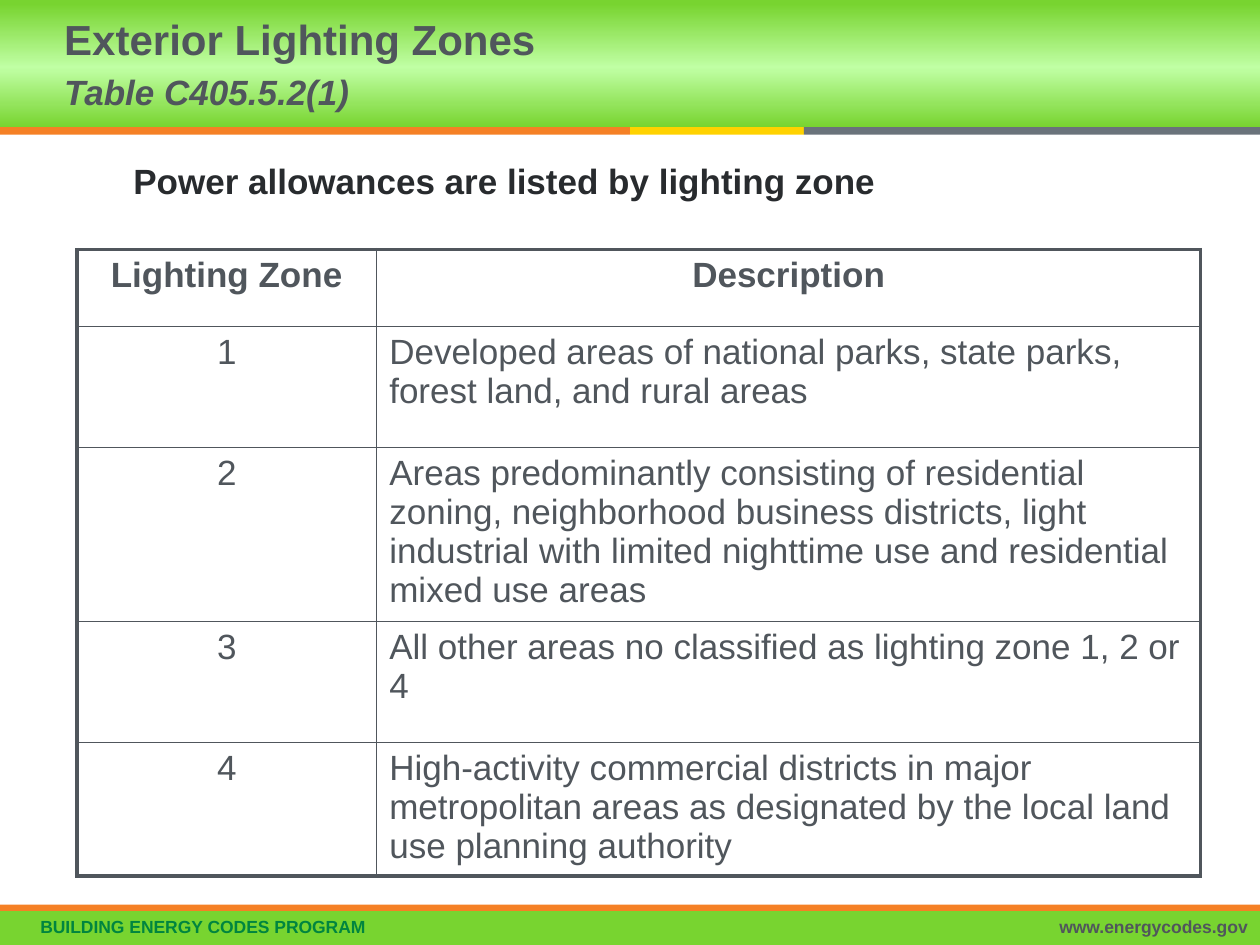
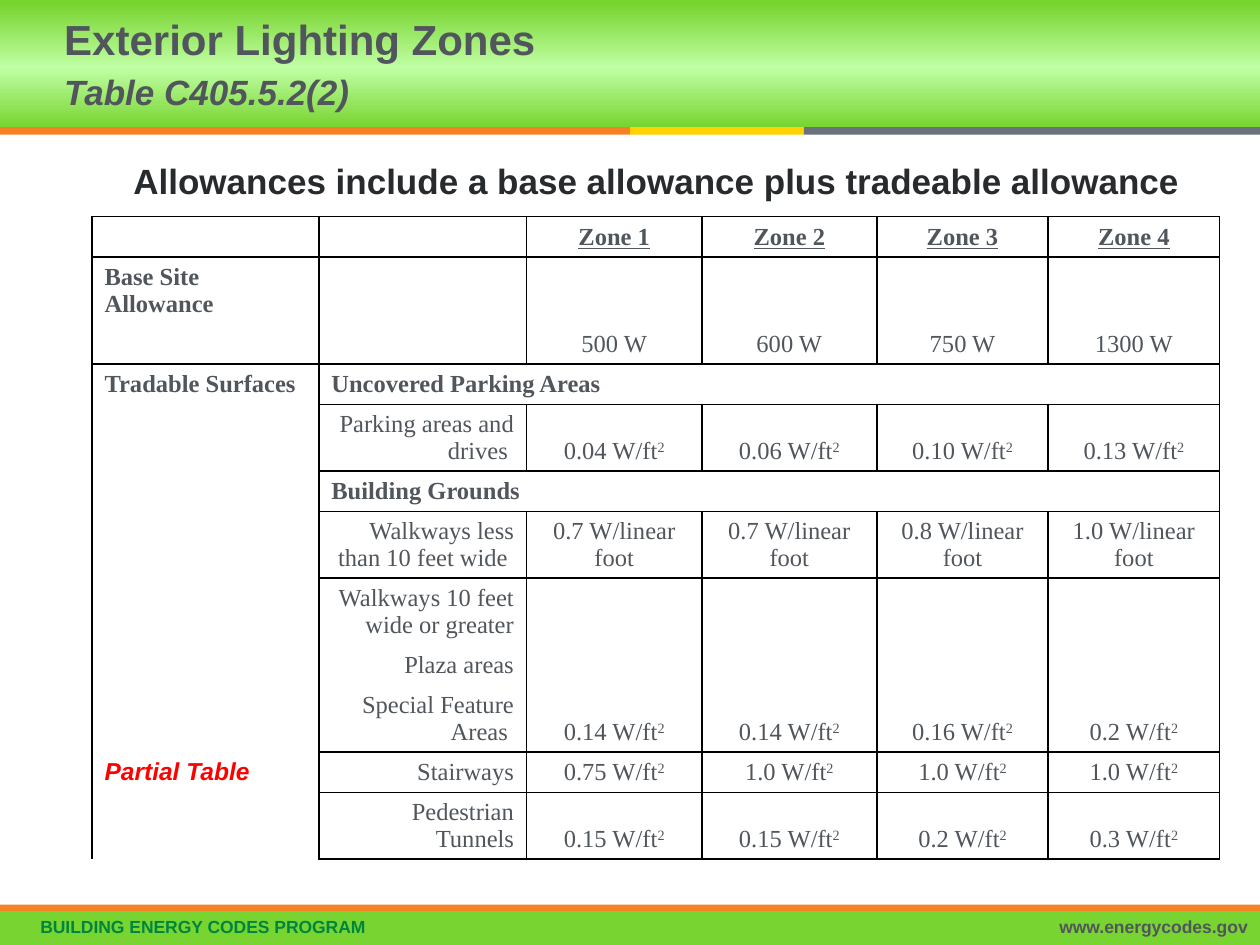
"""Build two slides on exterior lighting zones and their power allowances."""
from copy import deepcopy

from lxml.etree import SubElement
from pptx import Presentation
from pptx.dml.color import RGBColor
from pptx.enum.shapes import MSO_SHAPE as Shape
from pptx.enum.text import MSO_ANCHOR as Anchor, PP_ALIGN as Align
from pptx.oxml.ns import qn
from pptx.util import Inches, Pt

GREEN = RGBColor(0x78, 0xD4, 0x30)
LIGHT_GREEN = RGBColor(0xC0, 0xFF, 0xA4)
DARK_GREEN = RGBColor(0x00, 0x85, 0x3F)
ORANGE = RGBColor(0xF5, 0x80, 0x25)
YELLOW = RGBColor(0xFF, 0xD2, 0x00)
STEEL = RGBColor(0x6A, 0x73, 0x7B)
GRAY = RGBColor(0x50, 0x56, 0x5C)
CHARCOAL = RGBColor(0x28, 0x2B, 0x2E)
RED = RGBColor(0xFF, 0x00, 0x00)
BLACK = RGBColor(0x00, 0x00, 0x00)


def format_run(run, size, color=GRAY, bold=False, italic=False, name="Arial"):
    font = run.font
    font.name, font.size, font.bold, font.italic = name, Pt(size), bold, italic
    font.color.rgb = color


def set_borders(cell, color, left, right, top, bottom):
    properties = cell._tc.get_or_add_tcPr()
    for side, width in zip("LRTB", (left, right, top, bottom)):
        line = SubElement(properties, qn(f"a:ln{side}"), w=str(Pt(width)))
        if width:
            fill = SubElement(line, qn("a:solidFill"))
            SubElement(fill, qn("a:srgbClr"), val=str(color))
        else:
            SubElement(line, qn("a:noFill"))
    cell.fill.background()


presentation = Presentation()
presentation.slide_width, presentation.slide_height = Inches(10), Inches(7.5)
layout = presentation.slide_layouts[5]

titles = [
    ("Table C405.5.2(1)", "Power allowances are listed by lighting zone"),
    ("Table C405.5.2(2)", "Allowances include a base allowance plus tradeable allowance"),
]
slides = []
for table_number, statement in titles:
    slide = presentation.slides.add_slide(layout)
    slides.append(slide)
    title = slide.shapes.title
    title.left, title.top = Inches(0.41), Inches(0)
    title.width, title.height = Inches(5.97), Inches(1.01)
    title.text_frame.text = f"Exterior Lighting Zones\v{table_number}"
    title.text_frame.vertical_anchor = Anchor.MIDDLE
    paragraph = title.text_frame.paragraphs[0]
    paragraph.alignment = Align.LEFT
    paragraph.line_spacing = Pt(28)
    heading, subheading = paragraph.runs
    format_run(heading, 24, bold=True)
    format_run(subheading, 20, bold=True, italic=True)

    box = slide.shapes.add_textbox(Inches(0.96), Inches(1.22), Inches(8.7), Inches(0.42))
    box.text_frame.word_wrap = True
    box.text_frame.text = statement
    format_run(box.text_frame.paragraphs[0].runs[0], 20, CHARCOAL, bold=True)

zone_slide, allowance_slide = slides

shared_shapes = []
bands = [
    (0, 0, 10, 1.01, GREEN),
    (0, 7.23, 10, 0.27, GREEN),
    (0, 1.01, 5, 0.06, ORANGE),
    (5, 1.01, 1.38, 0.06, YELLOW),
    (6.38, 1.01, 3.62, 0.06, STEEL),
    (0, 7.18, 10, 0.05, ORANGE),
]
for left, top, width, height, color in bands:
    band = zone_slide.shapes.add_shape(
        Shape.RECTANGLE, Inches(left), Inches(top), Inches(width), Inches(height))
    band.shadow.inherit = False
    band.line.fill.background()
    band.fill.solid()
    band.fill.fore_color.rgb = color
    shared_shapes.append(band)

header_fill = shared_shapes[0].fill
header_fill.gradient()
header_fill.gradient_angle = 90
stop_list = shared_shapes[0].element.find(".//" + qn("a:gsLst"))
stop_list.append(deepcopy(stop_list[0]))
for stop, position, color in zip(
        header_fill.gradient_stops, (0, 0.47, 0.97), (GREEN, LIGHT_GREEN, GREEN)):
    stop.position = position
    stop.color.rgb = color

footers = [
    (0.07, 5.9, "BUILDING ENERGY CODES PROGRAM", DARK_GREEN, Align.LEFT),
    (5.99, 4.01, "www.energycodes.gov", GRAY, Align.RIGHT),
]
for left, width, text, color, alignment in footers:
    footer = zone_slide.shapes.add_textbox(
        Inches(left), Inches(7.22), Inches(width), Inches(0.26))
    frame = footer.text_frame
    frame.word_wrap = True
    frame.margin_left = Inches(0.25)
    frame.vertical_anchor = Anchor.MIDDLE
    frame.text = text
    frame.paragraphs[0].alignment = alignment
    format_run(frame.paragraphs[0].runs[0], 10, color, bold=True)
    shared_shapes.append(footer)

for number, shape in enumerate(shared_shapes):
    shape.element.find(".//" + qn("p:cNvPr")).set("id", str(100 + number))
    layout.shapes.element.insert(2 + number, shape.element)

zone_rows = [
    ("Lighting Zone", "Description"),
    ("1", "Developed areas of national parks, state parks, forest land, and rural areas"),
    ("2", "Areas predominantly consisting of residential zoning, neighborhood business "
          "districts, light industrial with limited nighttime use and residential "
          "mixed use areas"),
    ("3", "All other areas no classified as lighting zone 1, 2 or 4"),
    ("4", "High-activity commercial districts in major metropolitan areas as designated "
          "by the local land use planning authority"),
]
zone_heights = [0.61, 0.96, 1.38, 0.96, 1.06]
zone_widths = [2.38, 6.54]

allowance_rows = [
    ("", "", "Zone 1", "Zone 2", "Zone 3", "Zone 4"),
    ("Base Site Allowance", "", "500 W", "600 W", "750 W", "1300 W"),
    ("",) * 6,
    ("Tradable Surfaces", "Uncovered Parking Areas", "", "", "", ""),
    ("", "Parking areas and drives ", "0.04 W/ft^2", "0.06 W/ft^2", "0.10 W/ft^2", "0.13 W/ft^2"),
    ("", "Building Grounds", "", "", "", ""),
    ("", "Walkways less than 10 feet wide ", "0.7 W/linear foot", "0.7 W/linear foot",
     "0.8 W/linear foot", "1.0 W/linear foot"),
    ("", "Walkways 10 feet wide or greater", "0.14 W/ft^2", "0.14 W/ft^2",
     "0.16 W/ft^2", "0.2 W/ft^2"),
    ("", "Plaza areas", "", "", "", ""),
    ("", "Special Feature Areas ", "", "", "", ""),
    ("Partial Table", "Stairways", "0.75 W/ft^2", "1.0 W/ft^2", "1.0 W/ft^2", "1.0 W/ft^2"),
    ("", "Pedestrian Tunnels", "0.15 W/ft^2", "0.15 W/ft^2", "0.2 W/ft^2", "0.3 W/ft^2"),
]
single, double = 0.32, 0.53
allowance_heights = [single, double, single, single, double, single,
                     double, double, single, double, single, double]
allowance_widths = [1.8, 1.65, 1.39, 1.39, 1.36, 1.36]

tables = []
for slide, left, top, widths, heights in [
    (zone_slide, 0.61, 1.98, zone_widths, zone_heights),
    (allowance_slide, 0.73, 1.72, allowance_widths, allowance_heights),
]:
    table = slide.shapes.add_table(
        len(heights), len(widths), Inches(left), Inches(top),
        Inches(sum(widths)), Inches(sum(heights))).table
    table.first_row = table.horz_banding = False
    for column, width in zip(table.columns, widths):
        column.width = Inches(width)
    for row, height in zip(table.rows, heights):
        row.height = Inches(height)
    tables.append(table)
zone_table, allowance_table = tables

last_row = len(zone_rows) - 1
for row, texts in enumerate(zone_rows):
    for column, text in enumerate(texts):
        cell = zone_table.cell(row, column)
        cell.margin_bottom = 0
        cell.text_frame.text = text
        paragraph = cell.text_frame.paragraphs[0]
        paragraph.alignment = Align.CENTER if row == 0 or column == 0 else Align.LEFT
        format_run(paragraph.runs[0], 20, bold=row == 0)
        set_borders(cell, GRAY,
                    left=2.25 if column == 0 else 1,
                    right=2.25 if column == 1 else 1,
                    top=2.25 if row == 0 else 1,
                    bottom=2.25 if row == last_row else 1)

section_rows = (3, 5)
inner_lines = {2, 8, 9}
first_column_open = inner_lines | set(range(4, 13))
for row, texts in enumerate(allowance_rows):
    for column, text in enumerate(texts):
        cell = allowance_table.cell(row, column)
        is_section = row in section_rows
        paragraph = cell.text_frame.paragraphs[0]
        if column == 0 or is_section:
            cell.vertical_anchor = Anchor.TOP
            cell.margin_bottom = 0
            paragraph.alignment = Align.LEFT
        else:
            cell.vertical_anchor = Anchor.BOTTOM
            cell.margin_top = 0
            paragraph.alignment = Align.RIGHT if column == 1 else Align.CENTER
        if text:
            base, *exponent = text.split("^")
            for part in [base, *exponent]:
                run = paragraph.add_run()
                run.text = part
                format_run(run, 14, bold=row == 0 or column == 0 or is_section,
                           name="Times New Roman")
                run.font.underline = row == 0
            if exponent:
                run._r.get_or_add_rPr().set("baseline", "30000")
        else:
            SubElement(paragraph._p, qn("a:endParaRPr"), sz="1400")
        open_lines = inner_lines if column else first_column_open
        set_borders(cell, BLACK, left=1, right=1,
                    top=0 if row in open_lines else 1,
                    bottom=0 if row + 1 in open_lines else 1)

partial_note = allowance_table.cell(10, 0).text_frame.paragraphs[0].runs[0]
format_run(partial_note, 14, RED, bold=True, italic=True)

for row in section_rows:
    allowance_table.cell(row, 1).merge(allowance_table.cell(row, 5))
for column in range(1, 6):
    allowance_table.cell(1, column).merge(allowance_table.cell(2, column))
for column in range(2, 6):
    allowance_table.cell(7, column).merge(allowance_table.cell(9, column))

presentation.save("out.pptx")
